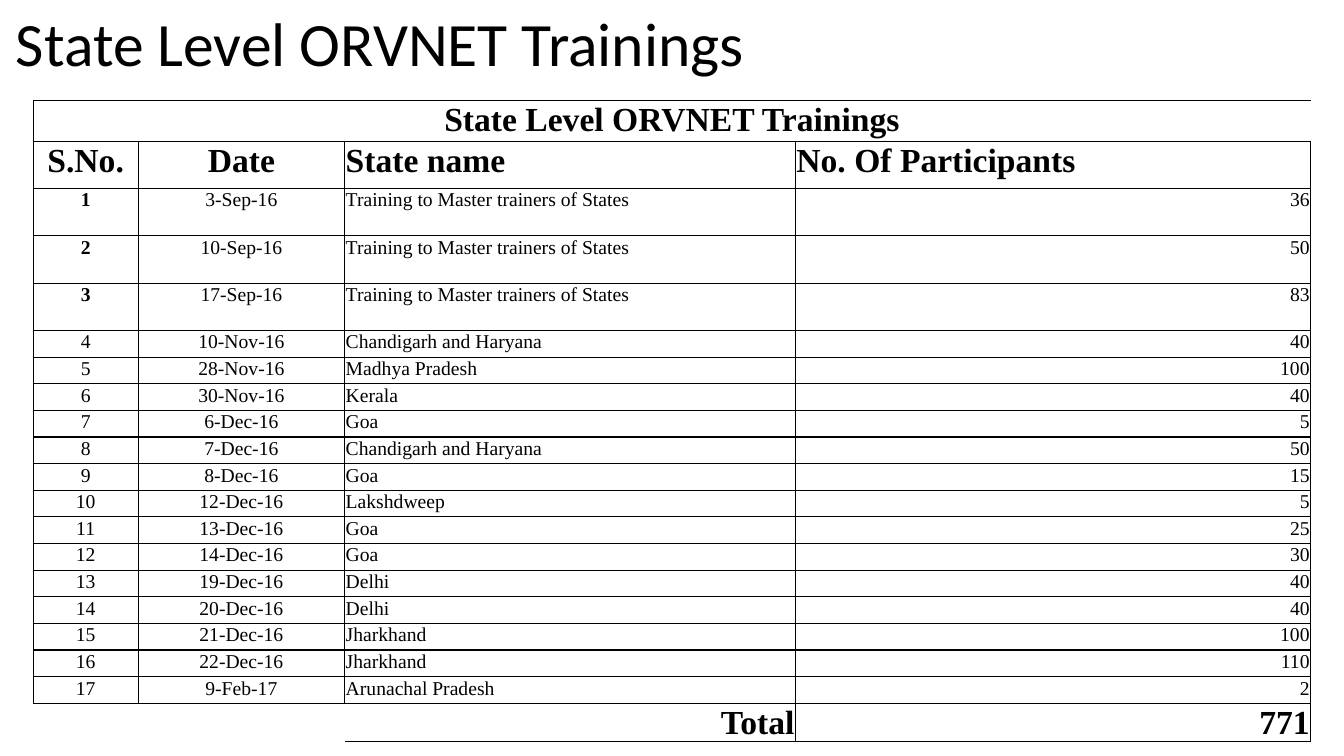
from typing import NamedTuple

from lxml.etree import SubElement
from pptx import Presentation
from pptx.dml.color import RGBColor
from pptx.enum.text import MSO_ANCHOR, MSO_AUTO_SIZE, PP_ALIGN
from pptx.oxml.ns import qn
from pptx.util import Inches, Pt

BLACK = "000000"
HEADING = "State Level ORVNET Trainings"
HEADERS = ("S.No.", "Date", "State name", "No. Of Participants")
COLUMN_WIDTHS = (1.04, 2.05, 4.47, 5.11)
COLUMN_ALIGNS = (PP_ALIGN.CENTER, PP_ALIGN.CENTER, PP_ALIGN.LEFT, PP_ALIGN.RIGHT)
MASTER_SESSIONS = 3
TITLE_HEIGHT, TALL_HEIGHT, TOTAL_HEIGHT = 0.4, 0.47, 0.38
COMPACT_BLOCK_HEIGHT = 3.7


class Training(NamedTuple):
    date: str
    state: str
    participants: int


TRAININGS = (
    Training("3-Sep-16", "Training to Master trainers of States", 36),
    Training("10-Sep-16", "Training to Master trainers of States", 50),
    Training("17-Sep-16", "Training to Master trainers of States", 83),
    Training("10-Nov-16", "Chandigarh and Haryana", 40),
    Training("28-Nov-16", "Madhya Pradesh", 100),
    Training("30-Nov-16", "Kerala", 40),
    Training("6-Dec-16", "Goa", 5),
    Training("7-Dec-16", "Chandigarh and Haryana", 50),
    Training("8-Dec-16", "Goa", 15),
    Training("12-Dec-16", "Lakshdweep", 5),
    Training("13-Dec-16", "Goa", 25),
    Training("14-Dec-16", "Goa", 30),
    Training("19-Dec-16", "Delhi", 40),
    Training("20-Dec-16", "Delhi", 40),
    Training("21-Dec-16", "Jharkhand", 100),
    Training("22-Dec-16", "Jharkhand", 110),
    Training("9-Feb-17", "Arunachal Pradesh", 2),
)


def color(value: str) -> RGBColor:
    return RGBColor.from_string(value)


def style_paragraph(para, size: float, name: str, bold: bool = False) -> None:
    para.font.size = Pt(size)
    para.font.name = name
    para.font.bold = bold
    para.font.color.rgb = color(BLACK)


def set_borders(cell, sides: str) -> None:
    """Draw the named sides (of L, R, T, B) and clear the others."""
    properties = cell._tc.get_or_add_tcPr()
    for position, side in enumerate("LRTB"):
        line = properties.makeelement(qn(f"a:ln{side}"), {"w": str(Pt(1))})
        if side in sides:
            fill = SubElement(line, qn("a:solidFill"))
            SubElement(fill, qn("a:srgbClr"), val=BLACK)
        else:
            SubElement(line, qn("a:noFill"))
        properties.insert(position, line)


def fill_cell(cell, text: str, align: PP_ALIGN, size: float = 24,
              bold: bool = True, sides: str = "LRTB") -> None:
    cell.margin_left = cell.margin_right = cell.margin_top = Inches(0.01)
    cell.margin_bottom = 0
    cell.vertical_anchor = MSO_ANCHOR.TOP
    cell.fill.background()
    set_borders(cell, sides)
    cell.text = text
    para = cell.text_frame.paragraphs[0]
    para.alignment = align
    style_paragraph(para, size, "Times New Roman", bold)


def add_heading(page) -> None:
    box = page.shapes.add_textbox(Inches(0.06), 0, Inches(8.44), Inches(0.84))
    box.text_frame.word_wrap = True
    box.text_frame.auto_size = MSO_AUTO_SIZE.SHAPE_TO_FIT_TEXT
    para = box.text_frame.paragraphs[0]
    para.text = HEADING
    style_paragraph(para, 44, "Calibri")


def add_training_table(page) -> None:
    compact_count = len(TRAININGS) - MASTER_SESSIONS
    heights = ([TITLE_HEIGHT] + [TALL_HEIGHT] * (1 + MASTER_SESSIONS)
               + [COMPACT_BLOCK_HEIGHT / compact_count] * compact_count
               + [TOTAL_HEIGHT])
    frame = page.shapes.add_table(
        len(heights), len(COLUMN_WIDTHS), Inches(0.33), Inches(1),
        Inches(sum(COLUMN_WIDTHS)), Inches(sum(heights)))
    table = frame.table
    table.first_row = table.horz_banding = False
    for column, width in zip(table.columns, COLUMN_WIDTHS):
        column.width = Inches(width)
    for row, height in zip(table.rows, heights):
        row.height = Inches(height)

    last_column = len(COLUMN_WIDTHS) - 1
    for index in range(len(COLUMN_WIDTHS)):
        fill_cell(table.cell(0, index), "" if index else HEADING, PP_ALIGN.CENTER,
                  sides="TB" if index else "LTB")
    table.cell(0, 0).merge(table.cell(0, last_column))

    for index, header in enumerate(HEADERS):
        align = PP_ALIGN.LEFT if index == last_column else COLUMN_ALIGNS[index]
        fill_cell(table.cell(1, index), header, align)

    for number, training in enumerate(TRAININGS, start=1):
        values = (number, *training)
        for index, (value, align) in enumerate(zip(values, COLUMN_ALIGNS)):
            bold = index == 0 and number <= MASTER_SESSIONS
            fill_cell(table.cell(number + 1, index), str(value), align, 14, bold)

    total = sum(training.participants for training in TRAININGS)
    totals = (("", "T"), ("", "T"), ("Total", "TRB"), (str(total), "LRTB"))
    for index, (text, sides) in enumerate(totals):
        fill_cell(table.cell(len(heights) - 1, index), text, PP_ALIGN.RIGHT, sides=sides)


def main() -> None:
    deck = Presentation()
    deck.slide_width, deck.slide_height = Inches(13.33), Inches(7.5)
    page = deck.slides.add_slide(deck.slide_layouts[6])
    add_training_table(page)
    add_heading(page)
    deck.save("out.pptx")


if __name__ == "__main__":
    main()
